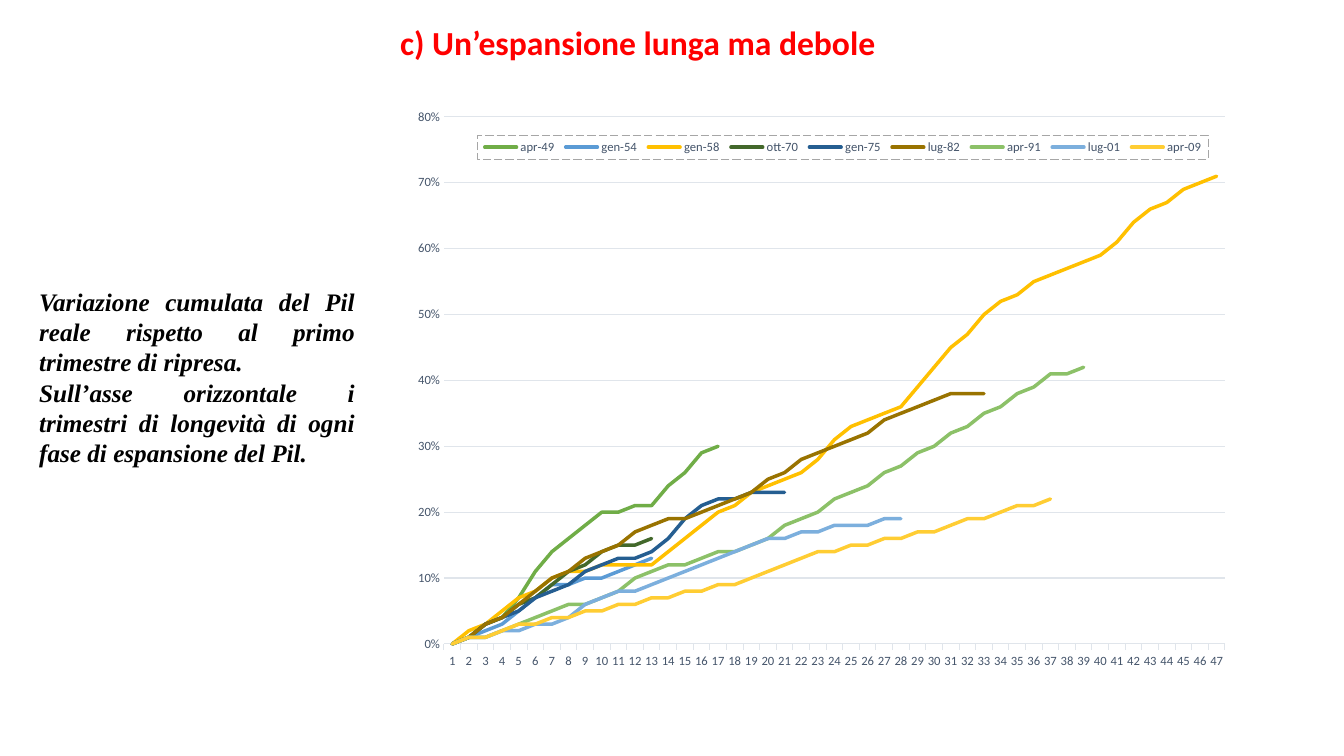
from lxml.etree import fromstring
from pptx import Presentation
from pptx.chart.data import CategoryChartData as Data
from pptx.dml.color import RGBColor
from pptx.enum.chart import XL_CHART_TYPE as Kind, XL_LEGEND_POSITION as Pos, XL_TICK_MARK as Tick
from pptx.enum.text import MSO_AUTO_SIZE as Fit, PP_ALIGN as Align
from pptx.util import Inches, Pt

NS = ('xmlns:c="http://schemas.openxmlformats.org/drawingml/2006/chart" '
      'xmlns:a="http://schemas.openxmlformats.org/drawingml/2006/main"')
SPAN, STEP = 47, 3
SLATE, PALE = "44546A", "E0E5EB"
PHASES = [
    ("apr-49", "70AD47", 17, [0, 4, 14, 20, 21, 29, 30]),
    ("gen-54", "5B9BD5", 13, [0, 3, 9, 10, 13]),
    ("gen-58", "FFC000", 47, [0, 5, 10, 12, 12, 18, 23, 26, 33, 36, 45, 52, 56, 59, 66, 70, 71]),
    ("ott-70", "43682B", 13, [0, 4, 9, 14, 16]),
    ("gen-75", "255E91", 21, [0, 4, 8, 12, 14, 21, 23, 23]),
    ("lug-82", "997300", 33, [0, 4, 10, 14, 18, 20, 23, 28, 31, 35, 38, 38]),
    ("apr-91", "8CC168", 39, [0, 2, 5, 7, 11, 13, 15, 19, 23, 27, 32, 36, 41, 42]),
    ("lug-01", "7CAFDD", 28, [0, 2, 3, 7, 9, 12, 15, 17, 18, 19]),
    ("apr-09", "FFCD33", 37, [0, 2, 4, 5, 7, 8, 10, 13, 15, 16, 18, 20, 22]),
]


def color(code):
    return RGBColor.from_string(code)


def style(font, name, size, code, bold=False, slant=False):
    font.name, font.size = name, Pt(size)
    font.bold, font.italic = bold, slant
    font.color.rgb = color(code)


def stroke(line, code, width):
    line.color.rgb = color(code)
    line.width = Pt(width)


def fill_rates(count, knots):
    rates = []
    for n in range(count - 1):
        i = n // STEP
        start = i * STEP
        width = min(STEP, count - 1 - start)
        rise = (knots[i + 1] - knots[i]) * (n - start) / width
        rates.append(round((knots[i] + rise) / 100, 2))
    return rates + [knots[-1] / 100] + [None] * (SPAN - count)


def add_box(slide, place):
    frame = slide.shapes.add_textbox(*map(Inches, place)).text_frame
    frame.word_wrap = True
    frame.auto_size = Fit.SHAPE_TO_FIT_TEXT
    return frame


def add_run(par, text, *look):
    run = par.add_run()
    run.text = text
    style(run.font, *look)


def add_note(slide, place, lines):
    frame = add_box(slide, place)
    frame.margin_right = Inches(2.5)
    for i, text in enumerate(lines):
        par = frame.add_paragraph() if i else frame.paragraphs[0]
        par.alignment = Align.JUSTIFY
        add_run(par, text, "Times New Roman", 18, "000000", True, True)


def add_title(slide, place, text):
    par = add_box(slide, place).paragraphs[0]
    par.level = 2
    props = par._p.get_or_add_pPr()
    props.set("marL", str(Inches(1)))
    props.set("indent", "0")
    add_run(par, text, "Calibri", 24, "FF0000", True)


def set_layout(node, index, box, inner=False):
    for old in node.xpath("./c:layout"):
        node.remove(old)
    target = '<c:layoutTarget val="inner"/>' if inner else ""
    modes = "".join(f'<c:{k}Mode val="edge"/>' for k in "xy")
    sizes = "".join(f'<c:{k} val="{v}"/>' for k, v in zip("xywh", box))
    node.insert(index, fromstring(
        f"<c:layout {NS}><c:manualLayout>{target}{modes}{sizes}</c:manualLayout></c:layout>"))


def set_legend(chart):
    chart.has_legend = True
    chart.legend.position = Pos.BOTTOM
    chart.legend.include_in_layout = True
    style(chart.legend.font, "Calibri", 9, SLATE)
    node = chart.element.xpath(".//c:legend")[0]
    set_layout(node, 1, (0.08, 0.05, 0.87, 0.04))
    node.xpath("./c:overlay")[0].addnext(fromstring(
        f'<c:spPr {NS}><a:noFill/><a:ln w="{Pt(0.75)}"><a:solidFill><a:srgbClr val="A6A6A6"/>'
        '</a:solidFill><a:prstDash val="lgDash"/></a:ln></c:spPr>'))


def set_axes(chart):
    cat, val = chart.category_axis, chart.value_axis
    for axis in (cat, val):
        style(axis.tick_labels.font, "Calibri", 9, SLATE)
        axis.minor_tick_mark = Tick.NONE
    cat.major_tick_mark = Tick.OUTSIDE
    stroke(cat.format.line, PALE, 0.75)
    val.major_tick_mark = Tick.NONE
    val.format.line.fill.background()
    val.minimum_scale, val.maximum_scale, val.major_unit = 0, 0.8, 0.1
    val.tick_labels.number_format = "0%"
    val.tick_labels.number_format_is_linked = False
    stroke(val.major_gridlines.format.line, PALE, 0.75)


def add_lines(slide, place):
    data = Data(number_format="0%")
    data.categories = [str(n) for n in range(1, SPAN + 1)]
    for name, _, count, knots in PHASES:
        data.add_series(name, fill_rates(count, knots))
    chart = slide.shapes.add_chart(Kind.LINE, *map(Inches, place), data).chart
    chart.has_title = False
    style(chart.font, "Calibri", 10, "000000")
    chart.plots[0].vary_by_categories = False
    for series, phase in zip(chart.plots[0].series, PHASES):
        series.smooth = False
        stroke(series.format.line, phase[1], 2.5)
    for line in chart.element.xpath(".//c:ser/c:spPr/a:ln"):
        line.set("cap", "rnd")
    set_axes(chart)
    set_legend(chart)
    area = chart.element.xpath(".//c:plotArea")[0]
    set_layout(area, 0, (0.04, 0.02, 0.93, 0.87), True)


def main():
    deck = Presentation()
    deck.slide_width, deck.slide_height = Inches(13.33), Inches(7.5)
    slide = deck.slides.add_slide(deck.slide_layouts[6])
    add_lines(slide, (4.07, 1.04, 8.33, 6.01))
    add_note(slide, (0.29, 2.79, 5.73, 1.92), [
        "Variazione cumulata del Pil reale rispetto al primo trimestre di ripresa. ",
        "Sull’asse orizzontale i trimestri di longevità di ogni fase di espansione del Pil."])
    add_title(slide, (2.87, 0.17, 11.8, 0.5), "c) Un’espansione lunga ma debole")
    deck.save("out.pptx")


if __name__ == "__main__":
    main()
